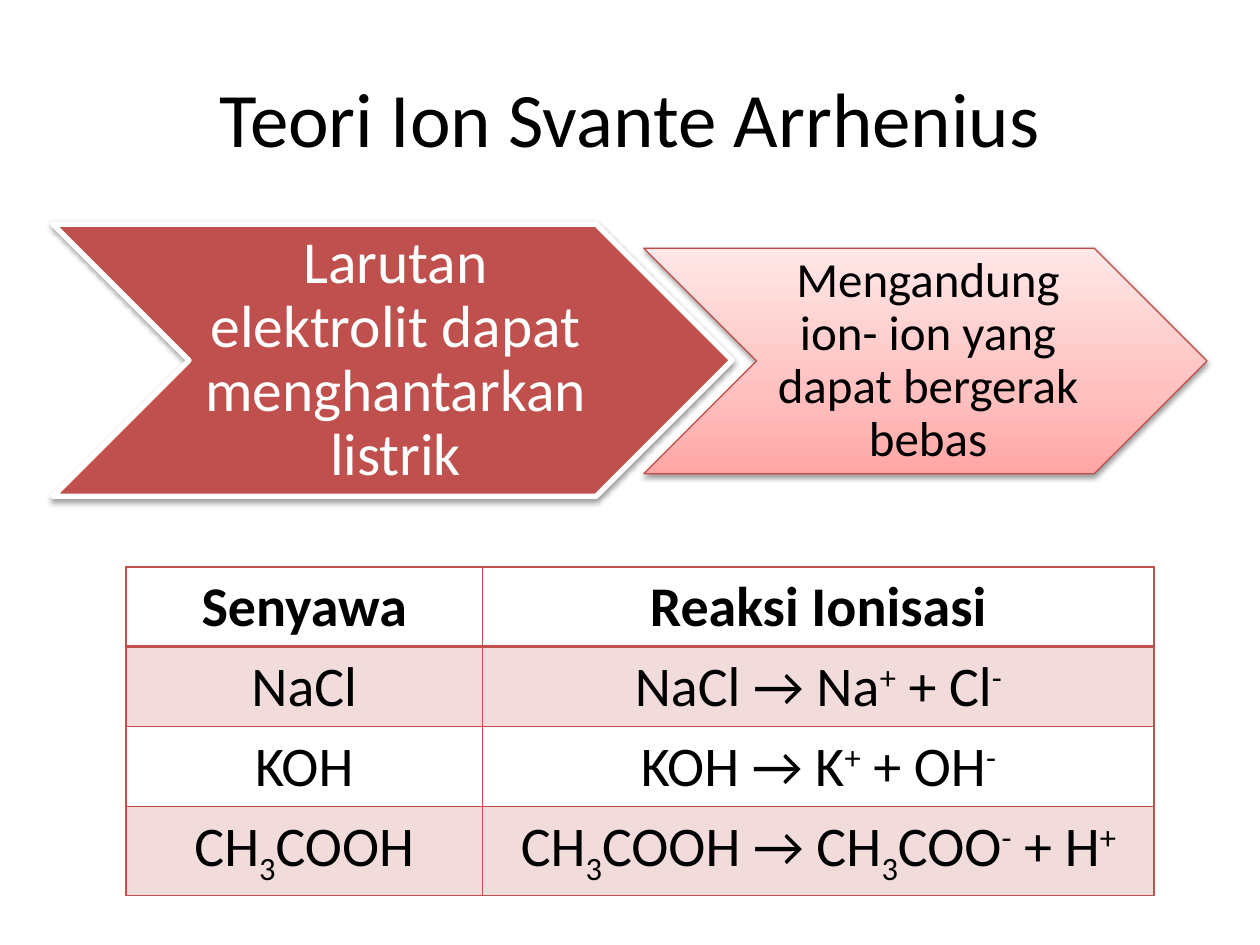
from lxml import etree
from pptx import Presentation
from pptx.dml.color import RGBColor
from pptx.enum.shapes import MSO_SHAPE
from pptx.enum.text import MSO_ANCHOR, PP_ALIGN
from pptx.oxml import parse_xml
from pptx.oxml.ns import nsdecls, qn
from pptx.util import Inches, Pt

CHEVRON = MSO_SHAPE.CHEVRON
CENTER = PP_ALIGN.CENTER
MIDDLE = MSO_ANCHOR.MIDDLE

BLACK = RGBColor(0x00, 0x00, 0x00)
WHITE = RGBColor(0xFF, 0xFF, 0xFF)
RED = RGBColor(0xC0, 0x50, 0x4D)
DARK_RED = RGBColor(0xBF, 0x4C, 0x48)
PINK_GRADIENT = [
    (0, RGBColor(0xFF, 0xA6, 0xA5)),
    (35, RGBColor(0xFF, 0xC0, 0xBF)),
    (100, RGBColor(0xFF, 0xE7, 0xE7)),
]
FONT = "Calibri"

TITLE = "Teori Ion Svante Arrhenius"
STEPS = [
    dict(text="Larutan elektrolit dapat menghantarkan listrik", size=34, color=WHITE,
         box=(0.42, 1.78, 5.39, 2.16), text_left=1.5, text_width=3.23,
         fill=RED, line=WHITE, line_width=3),
    dict(text="Mengandung ion- ion yang dapat bergerak bebas", size=28, color=BLACK,
         box=(5.11, 1.97, 4.47, 1.79), text_left=6, text_width=2.68,
         fill=PINK_GRADIENT, line=DARK_RED, line_width=0.75),
]
# "|" separates runs; a leading "^" raises a run and "_" lowers it
REACTIONS = [
    ("Senyawa", "Reaksi Ionisasi"),
    ("NaCl", "NaCl → Na|^+| + Cl|^-"),
    ("KOH", "KOH → K|^+| + OH|^-"),
    ("CH|_3|COOH", "CH|_3|COOH → CH|_3|COO|^-| + H|^+"),
]
BASELINES = {"^": "30000", "_": "-25000"}
COLUMN_WIDTHS = (2.83, 5.33)
ROW_HEIGHT = 0.6


def style_font(font, size, color, bold=False):
    font.name, font.size, font.bold = FONT, Pt(size), bold
    font.color.rgb = color


def add_text(slide, box, text, size, color, insets=(0.1, 0.05, 0.1, 0.05), spacing=1.0):
    frame = slide.shapes.add_textbox(*map(Inches, box)).text_frame
    frame.word_wrap = True
    frame.vertical_anchor = MIDDLE
    (frame.margin_left, frame.margin_top,
     frame.margin_right, frame.margin_bottom) = map(Inches, insets)
    frame.text = text
    paragraph = frame.paragraphs[0]
    paragraph.alignment = CENTER
    paragraph.line_spacing = spacing
    style_font(paragraph.runs[0].font, size, color)


def fill_gradient(shape, stops):
    """Run the stops from the bottom of the shape to its top."""
    stop_xml = "".join(
        f'<a:gs pos="{percent * 1000}"><a:srgbClr val="{color}"/></a:gs>'
        for percent, color in stops)
    gradient = parse_xml(
        f'<a:gradFill {nsdecls("a")} rotWithShape="1"><a:gsLst>{stop_xml}</a:gsLst>'
        '<a:lin ang="16200000" scaled="0"/></a:gradFill>')
    shape._element.spPr.find(qn("a:prstGeom")).addnext(gradient)


def add_shadow(shape):
    shape.shadow.inherit = False
    shape._element.spPr.find(qn("a:effectLst")).append(parse_xml(
        f'<a:outerShdw {nsdecls("a")} blurRad="{Pt(3.1)}" dist="{Pt(1.6)}" '
        'dir="5400000" rotWithShape="0"><a:srgbClr val="000000">'
        '<a:alpha val="38000"/></a:srgbClr></a:outerShdw>'))


def add_step(slide, step):
    chevron = slide.shapes.add_shape(CHEVRON, *map(Inches, step["box"]))
    if isinstance(step["fill"], list):
        fill_gradient(chevron, step["fill"])
    else:
        chevron.fill.solid()
        chevron.fill.fore_color.rgb = step["fill"]
    chevron.line.color.rgb = step["line"]
    chevron.line.width = Pt(step["line_width"])
    add_shadow(chevron)
    _, top, _, height = step["box"]
    add_text(slide, (step["text_left"], top, step["text_width"], height),
             step["text"], step["size"], step["color"],
             insets=(0.05, 0.02, 0, 0.02), spacing=0.9)


def set_borders(cell, widths):
    properties = cell._tc.get_or_add_tcPr()
    for side, width in widths.items():
        properties.append(parse_xml(
            f'<a:ln{side} {nsdecls("a")} w="{Pt(width)}"><a:solidFill>'
            f'<a:srgbClr val="{RED}"/></a:solidFill></a:ln{side}>'))


def write_formula(paragraph, formula, bold):
    paragraph.alignment = CENTER
    for part in formula.split("|"):
        baseline = BASELINES.get(part[0])
        run = paragraph.add_run()
        run.text = part[1:] if baseline else part
        style_font(run.font, 32, BLACK, bold)
        if baseline:
            run.font._element.set("baseline", baseline)


def add_reactions(slide):
    table = slide.shapes.add_table(
        len(REACTIONS), len(COLUMN_WIDTHS), Inches(1), Inches(4.5),
        Inches(sum(COLUMN_WIDTHS)), Inches(ROW_HEIGHT * len(REACTIONS))).table
    for column, width in zip(table.columns, COLUMN_WIDTHS):
        column.width = Inches(width)
    for r, formulas in enumerate(REACTIONS):
        table.rows[r].height = Inches(ROW_HEIGHT)
        for c, formula in enumerate(formulas):
            cell = table.cell(r, c)
            set_borders(cell, {"L": 1, "R": 1, "T": 2 if r == 1 else 1,
                               "B": 2 if r == 0 else 1})
            if r % 2:
                cell.fill.solid()
                cell.fill.fore_color.rgb = RED
                tint = cell._tc.tcPr.find(qn("a:solidFill")).find(qn("a:srgbClr"))
                etree.SubElement(tint, qn("a:alpha"), val="20000")
            else:
                cell.fill.background()
            write_formula(cell.text_frame.paragraphs[0], formula, bold=r == 0)


def main():
    presentation = Presentation()
    presentation.slide_width, presentation.slide_height = Inches(10), Inches(7.5)
    slide = presentation.slides.add_slide(presentation.slide_layouts[6])
    add_text(slide, (0.5, 0.3, 9, 1.25), TITLE, 44, BLACK)
    for step in STEPS:
        add_step(slide, step)
    add_reactions(slide)
    presentation.save("out.pptx")


if __name__ == "__main__":
    main()
